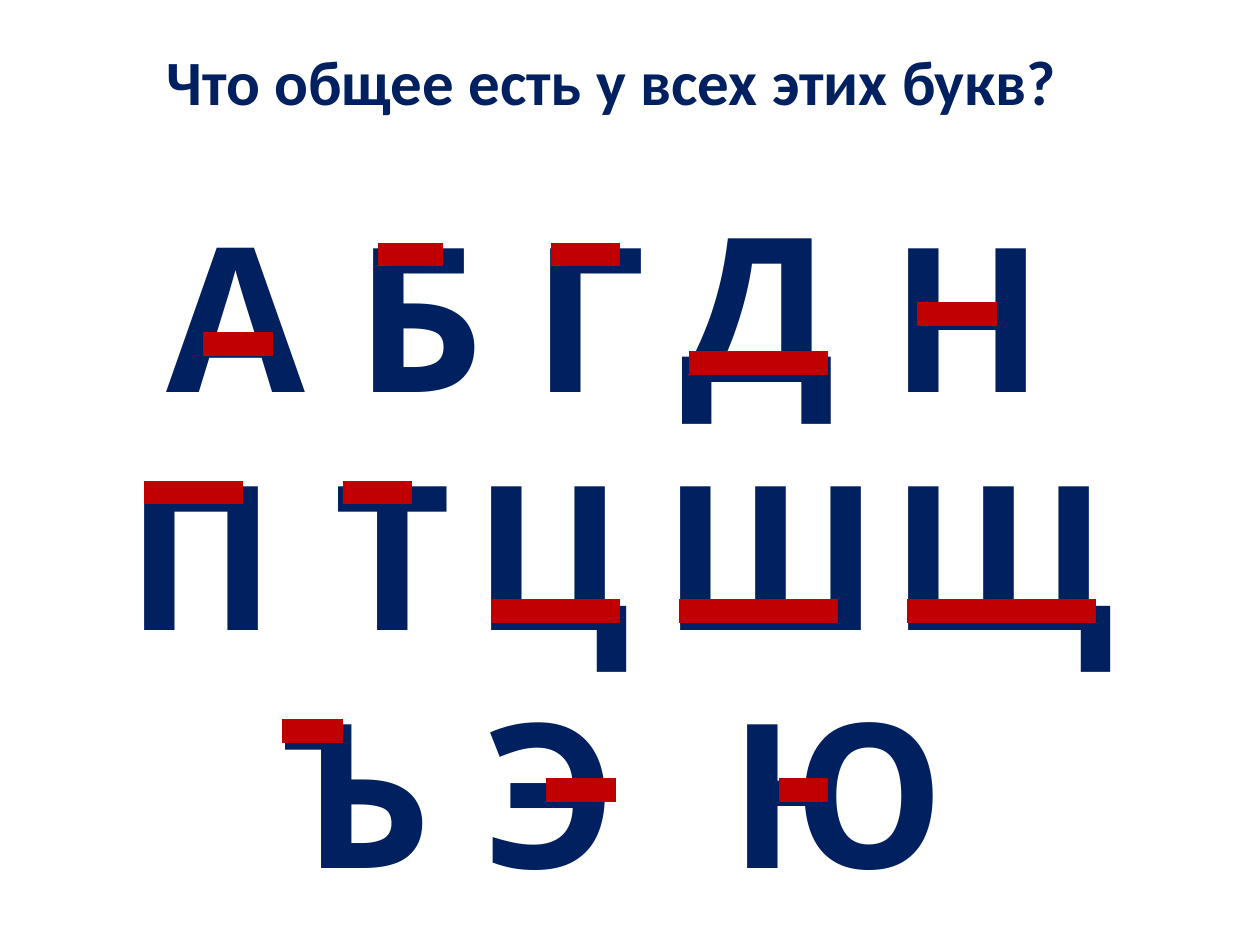
from pptx import Presentation
from pptx.dml.color import RGBColor
from pptx.enum import shapes, text
from pptx.oxml import ns
from pptx.util import Inches, Pt
from lxml import etree

NAVY = RGBColor(0x00, 0x20, 0x60)
RED = RGBColor(0xC0, 0x00, 0x00)

ROW_TOP, ROW_STEP, LETTER_HEIGHT = 1.47, 1.89, 2.04
ROWS = [
    [("А", 1.22, 1.4, 1.61, 2.17, 2.73),
     ("Б", 2.72, 1.12, 3, 3.52, 2.02),
     ("Г", 4.13, 0.95, 4.37, 4.92, 2.02),
     ("Д", 5.31, 1.44, 5.47, 6.57, 2.88),
     ("Н", 6.97, 1.3, 7.28, 7.91, 2.49)],
    [("П", 0.91, 1.3, 1.14, 1.93, 3.91),
     ("Т", 2.56, 0.88, 2.72, 3.27, 3.91),
     ("Ц", 3.66, 1.41, 3.9, 4.92, 4.85),
     ("Ш", 5.16, 1.76, 5.39, 6.65, 4.85),
     ("Щ", 6.97, 1.85, 7.2, 8.7, 4.85)],
    [("Ъ", 2.17, 1.26, 2.24, 2.72, 5.8),
     ("Э", 3.74, 1.2, 4.33, 4.89, 6.27),
     ("Ю", 5.69, 1.9, 6.18, 6.57, 6.27)],
]
RAISED = {"Д": 0.08}


class LetterSlide:
    """Draws the title, letters and bars of one slide in a shared style."""

    def __init__(self, prs):
        self.s = prs.slides.add_slide(prs.slide_layouts[5])

    def set_text(self, sp, words, font, size):
        tf = sp.text_frame
        tf.text = words
        tf.word_wrap = False
        tf.auto_size = text.MSO_AUTO_SIZE.SHAPE_TO_FIT_TEXT
        tf.vertical_anchor = text.MSO_ANCHOR.TOP
        p = tf.paragraphs[0]
        p.alignment = text.PP_ALIGN.LEFT
        p.font.name = font
        p.font.size = Pt(size)
        p.font.bold = True
        p.font.color.rgb = NAVY

    def title(self, words, x, y, w, h):
        sp = self.s.shapes.title
        sp.left, sp.top, sp.width, sp.height = map(Inches, (x, y, w, h))
        self.set_text(sp, words, "Calibri", 36)

    def letter(self, char, x, y, w):
        sp = self.s.shapes.add_textbox(*map(Inches, (x, y, w, LETTER_HEIGHT)))
        self.set_text(sp, char, "Quicksand", 115)

    def bar(self, start, end, y):
        line = self.s.shapes.add_connector(
            shapes.MSO_CONNECTOR.STRAIGHT, *map(Inches, (start, y, end, y)))
        line.line.color.rgb = RED
        line.line.width = Pt(13.5)
        etree.SubElement(line._element.spPr, ns.qn("a:effectLst"))


def main():
    prs = Presentation()
    prs.slide_width, prs.slide_height = Inches(10), Inches(7.5)
    slide = LetterSlide(prs)
    slide.title("Что общее есть у всех этих букв?", 1.22, 0.29, 7.33, 0.71)
    for i, row in enumerate(ROWS):
        top = ROW_TOP + i * ROW_STEP
        for char, x, w, start, end, bar_y in row:
            slide.letter(char, x, top - RAISED.get(char, 0), w)
            slide.bar(start, end, bar_y)
    prs.save("out.pptx")


if __name__ == "__main__":
    main()
